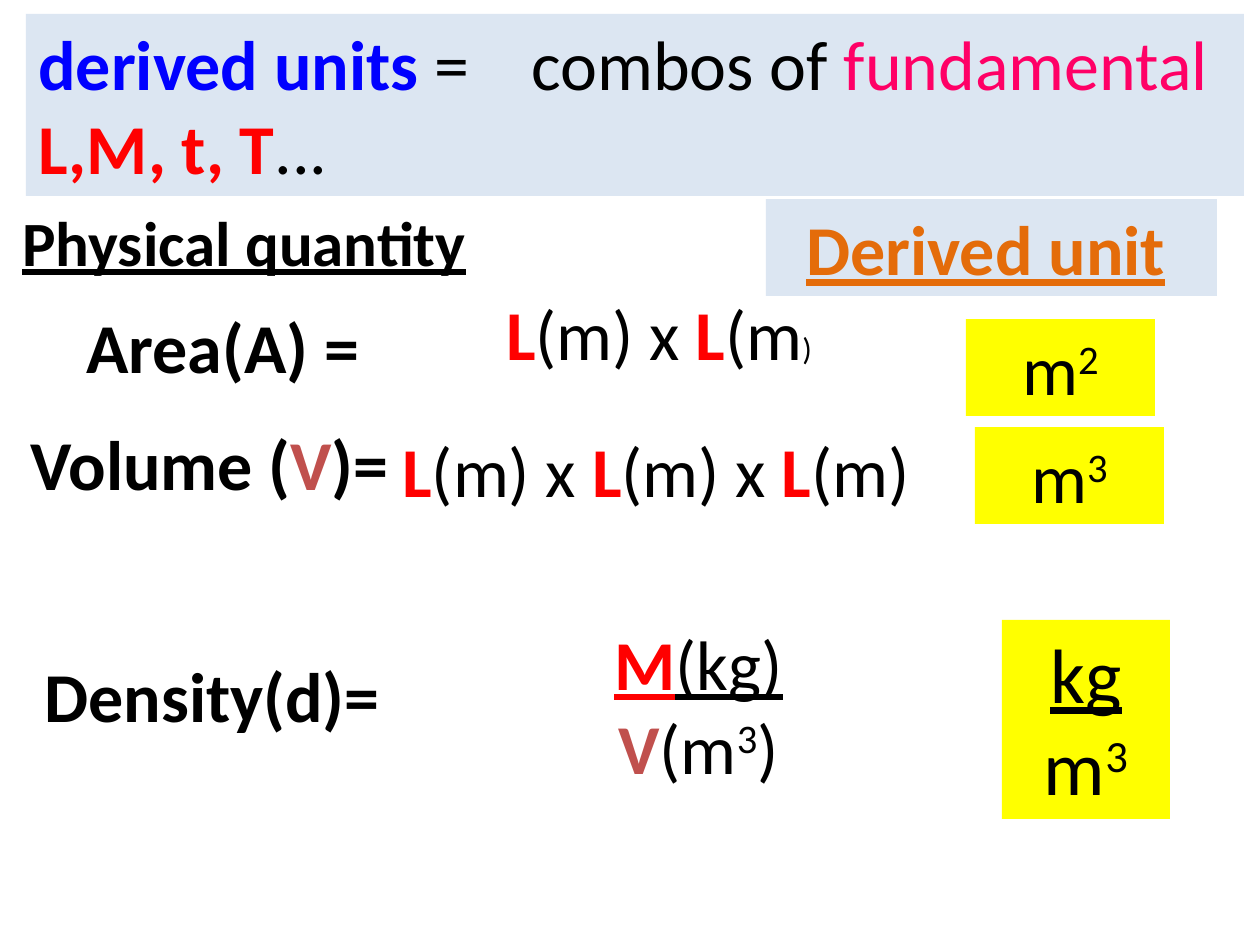
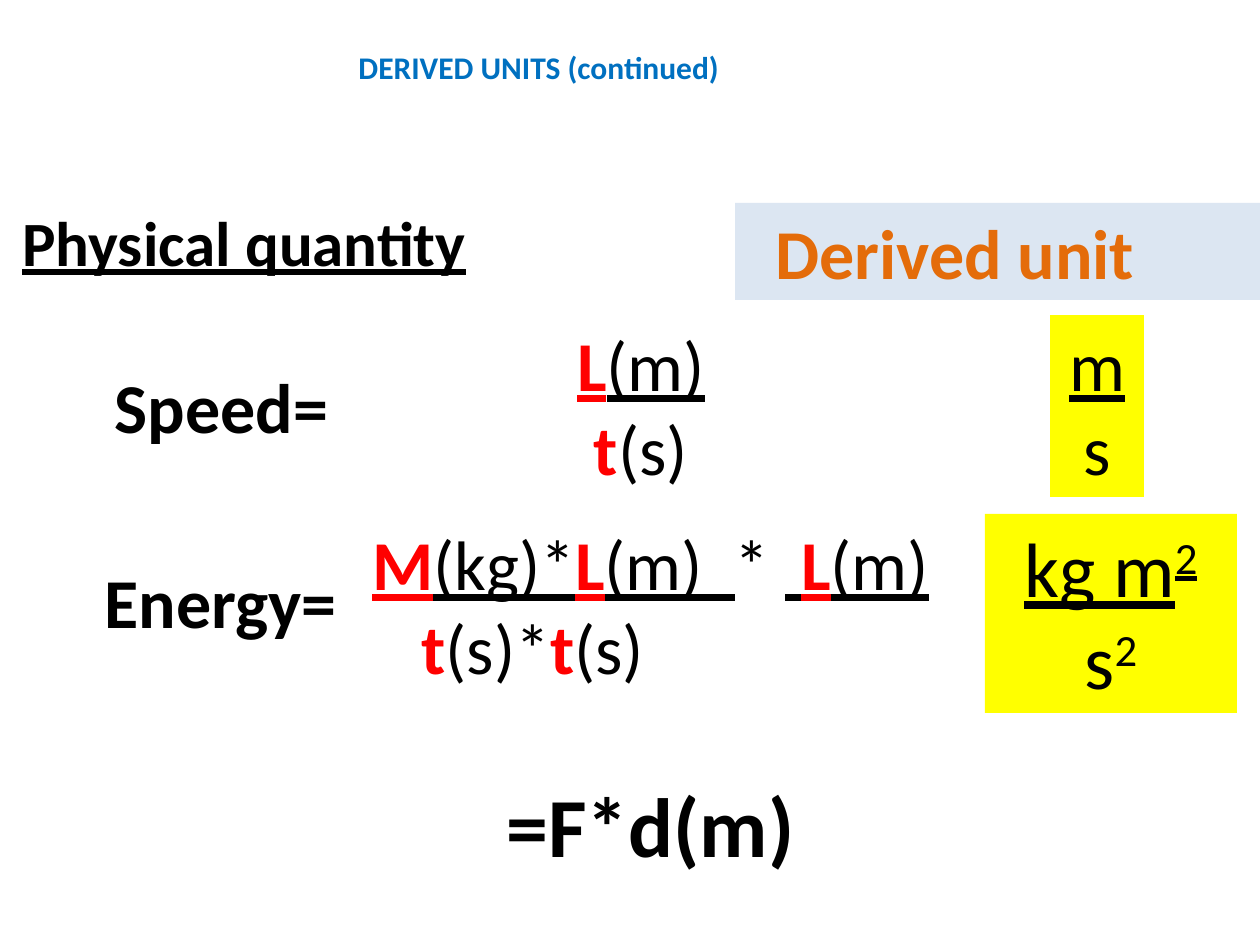
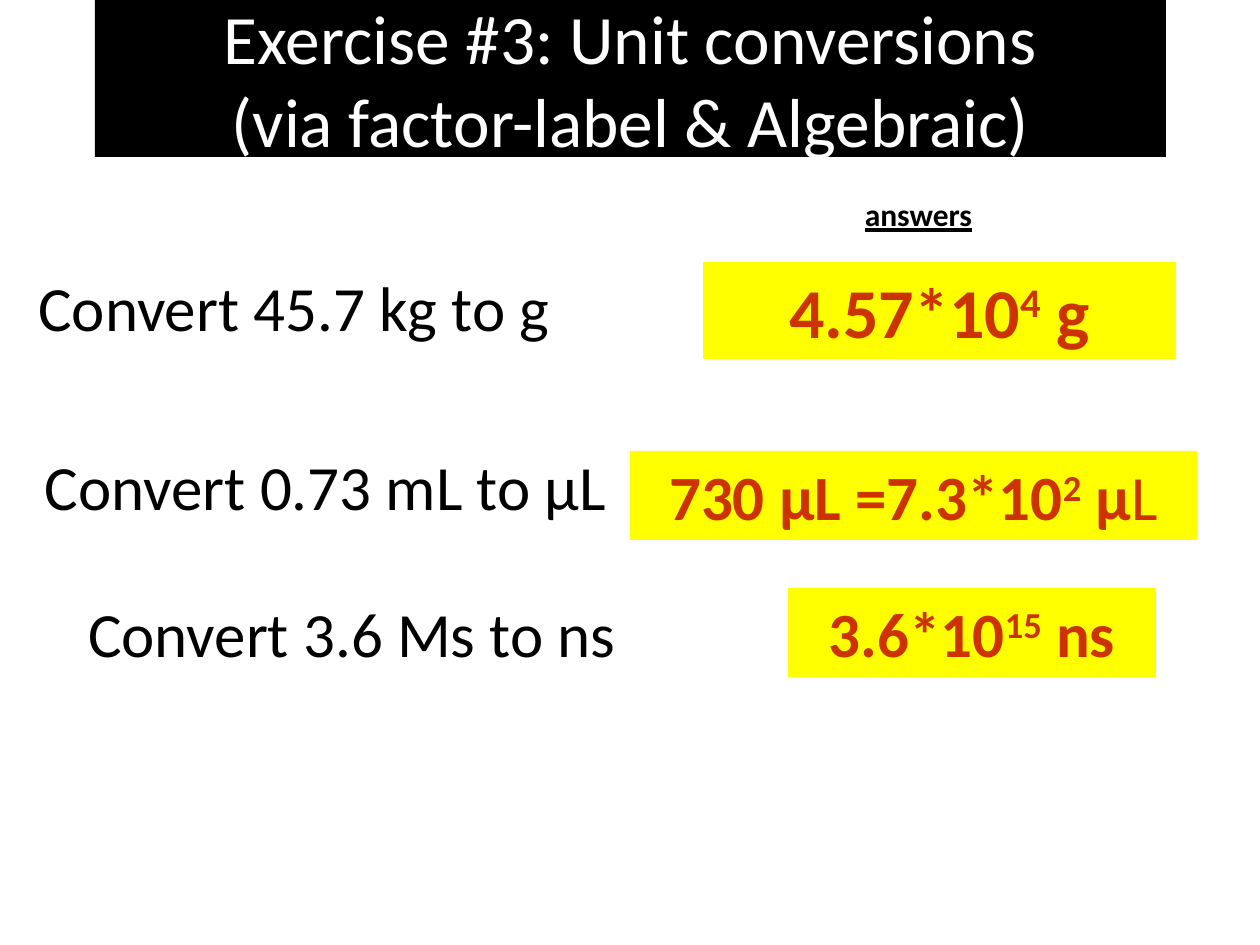
from dataclasses import dataclass

from lxml import etree
from pptx import Presentation
from pptx import util as u
from pptx.dml.color import RGBColor
from pptx.enum import shapes, text
from pptx.oxml.ns import qn

# Shared style
PX_PER_INCH = 126
FONT = "Calibri"
BLACK = RGBColor(0x00, 0x00, 0x00)
WHITE = RGBColor(0xFF, 0xFF, 0xFF)
RED = RGBColor(0xFF, 0x00, 0x00)
BLUE = RGBColor(0x00, 0x00, 0xFF)
SKY = RGBColor(0x00, 0x70, 0xC0)
PINK = RGBColor(0xFF, 0x00, 0x66)
BRICK = RGBColor(0xC0, 0x50, 0x4D)
ORANGE = RGBColor(0xE4, 0x6C, 0x0A)
RUST = RGBColor(0xCC, 0x33, 0x00)
PALE_BLUE = RGBColor(0xDC, 0xE6, 0xF2)
YELLOW = RGBColor(0xFF, 0xFF, 0x00)
LEFT = text.PP_ALIGN.LEFT
CENTER = text.PP_ALIGN.CENTER


def px(length):
    return u.Emu(round(length * u.Inches(1) / PX_PER_INCH))


@dataclass
class Span:
    text: str
    color: RGBColor = BLACK
    bold: bool = False
    underline: bool = False
    raised: bool = False
    size: float = 0


@dataclass
class Line:
    spans: list
    align: int = CENTER
    indent: int = 0
    tab: int = 0
    space_before: int = 0


def symbol(letter, color=RED, underline=False):
    return Span(letter, color, bold=True, underline=underline)


def power(exponent, **style):
    return Span(exponent, raised=True, **style)


def product(*factors, sign=" x "):
    """Spans for factors such as L(m) x L(m)."""
    spans = []
    for index, (letter, unit) in enumerate(factors):
        tail = sign if index < len(factors) - 1 else ""
        spans += [symbol(letter), Span(f"({unit}){tail}")]
    return spans


class Deck:
    def __init__(self):
        self.deck = Presentation()
        self.deck.slide_width = px(1260)
        self.deck.slide_height = px(945)
        self.page = None

    def new_page(self):
        self.page = self.deck.slides.add_slide(self.deck.slide_layouts[6])

    def label(self, left, top, width, height, lines, size=40):
        """Plain text box."""
        box = self.page.shapes.add_textbox(px(left), px(top), px(width), px(height))
        self.add_lines(box, lines, size)
        return box

    def panel(self, left, top, width, height, fill, lines, size=40):
        """Filled rectangle with text."""
        box = self.page.shapes.add_shape(
            shapes.MSO_SHAPE.RECTANGLE, px(left), px(top), px(width), px(height))
        box.shadow.inherit = False
        box.fill.solid()
        box.fill.fore_color.rgb = fill
        box.line.fill.background()
        self.add_lines(box, lines, size)
        return box

    def add_lines(self, box, lines, size):
        frame = box.text_frame
        frame.word_wrap = True
        frame.auto_size = text.MSO_AUTO_SIZE.SHAPE_TO_FIT_TEXT
        frame.vertical_anchor = text.MSO_ANCHOR.TOP
        for index, line in enumerate(lines):
            para = frame.add_paragraph() if index else frame.paragraphs[0]
            para.alignment = line.align
            para.space_before = u.Pt(line.space_before)
            properties = para._p.get_or_add_pPr()
            if line.indent:
                properties.set("marL", str(px(line.indent)))
            if line.tab:
                stops = etree.SubElement(properties, qn("a:tabLst"))
                etree.SubElement(stops, qn("a:tab"), pos=str(px(line.tab)), algn="l")
            for span in line.spans:
                self.add_span(para, span, size)

    def add_span(self, para, span, size):
        run = para.add_run()
        run.text = span.text
        font = run.font
        font.name = FONT
        font.size = u.Pt(span.size or size)
        font.color.rgb = span.color
        font.bold = span.bold
        font.underline = span.underline
        if span.raised:
            run._r.get_or_add_rPr().set("baseline", "30000")

    def quantity(self, left, top, width, *spans):
        """Bold name of a physical quantity."""
        self.label(left, top, width, 97, [Line(list(spans))])

    def answer(self, left, top, width, height, *lines, size=40):
        """Yellow result box."""
        self.panel(left, top, width, height, YELLOW, [Line(line) for line in lines], size)

    def column_heads(self, left, top, width, underline):
        heading = Span("Derived unit", ORANGE, bold=True, underline=underline)
        self.panel(left, top, width, 97, PALE_BLUE, [Line([heading], LEFT, indent=28)])
        name = Span("Physical quantity", bold=True, underline=True)
        self.label(10, 197, 473, 89, [Line([name], LEFT)], size=36)

    def banner(self, left, top, width, height, first, second):
        box = self.panel(left, top, width, height, BLACK,
                         [Line([Span(row, WHITE)]) for row in (first, second)], 39.6)
        box.text_frame.auto_size = text.MSO_AUTO_SIZE.NONE
        box.text_frame.vertical_anchor = text.MSO_ANCHOR.MIDDLE


def area_volume_density(deck):
    deck.new_page()
    # Definition
    deck.panel(26, 14, 1218, 182, PALE_BLUE, [Line([
        Span("derived units ", BLUE, bold=True), Span("=\tcombos of "),
        Span("fundamental ", PINK), symbol("L,M, t, T"), Span("...")], LEFT, tab=493)])
    deck.column_heads(766, 199, 451, underline=True)
    # Area
    deck.quantity(23, 297, 399, Span("Area(A) =", bold=True))
    deck.label(486, 284, 346, 97, [Line([
        symbol("L"), Span("(m) x "), symbol("L"), Span("(m"), Span(")", size=18)])])
    deck.answer(966, 319, 189, 97, [Span("m"), power("2")])
    # Volume
    deck.quantity(10, 414, 399, Span("Volume (", bold=True), symbol("V", BRICK),
                  Span(")=", bold=True))
    deck.label(388, 421, 536, 97, [Line(product(*[("L", "m")] * 3))])
    deck.answer(975, 427, 189, 97, [Span("m"), power("3")])
    # Density
    deck.quantity(15, 646, 394, Span("Density(d)=", bold=True))
    deck.label(483, 614, 431, 182, [
        Line([symbol("M", underline=True), Span("(kg)", underline=True)]),
        Line([symbol("V", BRICK), Span("(m"), power("3"), Span(")")])])
    deck.answer(1002, 620, 168, 199, [Span("kg", underline=True)],
                [Span("m"), power("3")], size=44)


def speed_energy(deck):
    deck.new_page()
    deck.panel(346, 42, 536, 50, WHITE, [
        Line([Span("DERIVED UNITS (continued)", SKY, bold=True)], LEFT)], size=18)
    deck.column_heads(735, 203, 525, underline=False)
    # Speed
    deck.quantity(81, 357, 281, Span("Speed=", bold=True))
    deck.label(431, 315, 420, 182, [
        Line([symbol("L", underline=True), Span("(m)", underline=True)]),
        Line(product(("t", "s")))])
    deck.answer(1050, 315, 94, 182, [Span("m", underline=True)], [Span("s")])
    # Energy
    deck.quantity(53, 552, 335, Span("Energy=", bold=True))
    deck.label(346, 514, 609, 369, [
        Line([symbol("M", underline=True), Span("(kg)*", underline=True),
              symbol("L", underline=True), Span("(m)  ", underline=True),
              Span("* "), Span(" ", underline=True),
              symbol("L", underline=True), Span("(m)", underline=True)]),
        Line(product(("t", "s"), ("t", "s"), sign="*"), LEFT, indent=63),
        Line([Span("=F*d(m)", bold=True, size=48)], space_before=49)])
    deck.answer(985, 514, 252, 199,
                [Span("kg m", underline=True), power("2", underline=True)],
                [Span("s"), power("2")], size=44)


def unit_conversions(deck):
    deck.new_page()
    deck.banner(95, 0, 1071, 157, "Exercise #3: Unit conversions",
                "(via factor-label & Algebraic)")
    # Questions
    for left, top, width, question in (
            (0, 262, 588, "Convert 45.7 kg to g"),
            (21, 441, 609, "Convert 0.73 mL to μL"),
            (32, 588, 640, "Convert 3.6 Ms to ns")):
        deck.label(left, top, width, 89, [Line([Span(question)])], size=36)
    # Answers
    deck.label(703, 189, 431, 72,
               [Line([Span("answers", bold=True, underline=True)])], size=18)
    rust = {"color": RUST, "bold": True}
    for left, top, width, height, size, number, exponent, unit, tail in (
            (703, 262, 473, 97, 40, "4.57*10", "4", " g", []),
            (630, 451, 567, 89, 36, "730 μL =7.3*10", "2", " μ", [Span("L", RUST)]),
            (788, 588, 368, 89, 36, "3.6*10", "15", " ns", [])):
        deck.answer(left, top, width, height,
                    [Span(number, **rust), power(exponent, **rust), Span(unit, **rust), *tail],
                    size=size)


def main():
    deck = Deck()
    area_volume_density(deck)
    speed_energy(deck)
    unit_conversions(deck)
    deck.deck.save("out.pptx")


if __name__ == "__main__":
    main()
